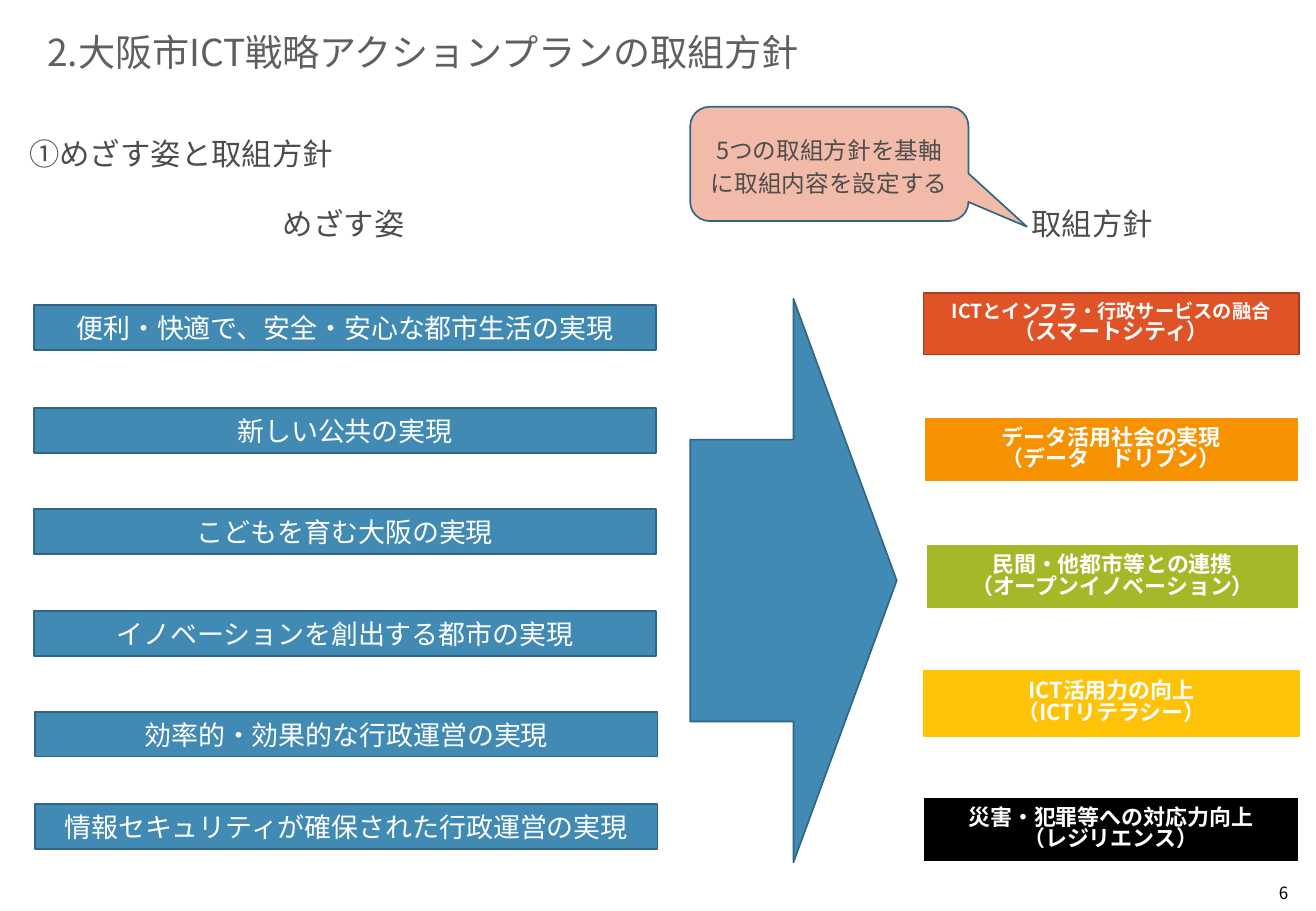
from lxml.etree import SubElement
from pptx import Presentation
from pptx.dml.color import RGBColor
from pptx.enum.shapes import MSO_SHAPE
from pptx.enum.text import MSO_ANCHOR, PP_ALIGN
from pptx.oxml.ns import qn
from pptx.util import Inches, Pt

FONT = "Noto Sans CJK JP"
BLUE, DARK_BLUE = "418AB3", "306684"
WHITE, GREY = "FFFFFF", "4D4D4D"

VISIONS = [
    (0.28, 2.51, "便利・快適で、安全・安心な都市生活の実現"),
    (0.28, 3.36, "新しい公共の実現"),
    (0.28, 4.19, "こどもを育む大阪の実現"),
    (0.28, 5.03, "イノベーションを創出する都市の実現"),
    (0.29, 5.86, "効率的・効果的な行政運営の実現"),
    (0.29, 6.62, "情報セキュリティが確保された行政運営の実現"),
]
# box, fill, line colour, line width, text (\v is a line break)
POLICIES = [
    ((7.6, 2.41, 3.09, 0.51), "DF5327", "A53D1D", 1,
     "ICTとインフラ・行政サービスの融合\v（スマートシティ）"),
    ((7.6, 3.43, 3.09, 0.54), "F69200", WHITE, 1.5,
     "データ活用社会の実現\v（データ　ドリブン）"),
    ((7.62, 4.48, 3.07, 0.54), "A6B727", WHITE, 1.5,
     "民間・他都市等との連携\v（オープンイノベーション）"),
    ((7.6, 5.52, 3.09, 0.54), "FEC306", "FEC306", 1,
     "ICT活用力の向上\v（ICTリテラシー）"),
    ((7.59, 6.56, 3.1, 0.54), "000000", WHITE, 1.5,
     "災害・犯罪等への対応力向上\v（レジリエンス）"),
]


def color(hex_text):
    return RGBColor.from_string(hex_text)


class SlideBuilder:
    def __init__(self, slide):
        self.slide = slide

    def set_text(self, shape, text, size, text_color, align=PP_ALIGN.LEFT, bold=False, spacing=1.0):
        """Fill the shape with one styled, vertically centred paragraph."""
        frame = shape.text_frame
        frame.word_wrap = True
        frame.vertical_anchor = MSO_ANCHOR.MIDDLE
        frame.margin_top = frame.margin_bottom = 0
        paragraph = frame.paragraphs[0]
        paragraph.text = text
        paragraph.alignment = align
        paragraph.line_spacing = spacing
        font = paragraph.font
        font.size = Pt(size)
        font.bold = bold
        font.color.rgb = color(text_color)
        font.name = FONT
        properties = paragraph._p.pPr.find(qn("a:defRPr"))
        SubElement(properties, qn("a:ea")).set("typeface", FONT)
        return paragraph

    def title(self, box, text):
        shape = self.slide.shapes.title
        shape.left, shape.top, shape.width, shape.height = map(Inches, box)
        self.set_text(shape, text, 22, "5F5F5F", spacing=0.9)

    def label(self, box, text, size=18, text_color=GREY, align=PP_ALIGN.LEFT):
        shape = self.slide.shapes.add_textbox(*map(Inches, box))
        self.set_text(shape, text, size, text_color, align)
        return shape

    def shape(self, kind, box, fill, line=DARK_BLUE, line_width=1):
        shape = self.slide.shapes.add_shape(kind, *map(Inches, box))
        shape.shadow.inherit = False
        shape.fill.solid()
        shape.fill.fore_color.rgb = color(fill)
        shape.line.color.rgb = color(line)
        shape.line.width = Pt(line_width)
        return shape


def main():
    presentation = Presentation()
    presentation.slide_width = Inches(10.83)
    presentation.slide_height = Inches(7.5)
    slide = presentation.slides.add_slide(presentation.slide_layouts[5])
    builder = SlideBuilder(slide)

    builder.title((0.29, 0.24, 9.95, 0.41), "2.大阪市ICT戦略アクションプランの取組方針")
    heading = builder.label((0.24, 1.05, 4.88, 0.42), "①めざす姿と取組方針")
    heading.text_frame.margin_left = 0
    builder.label((2.23, 1.64, 1.3, 0.4), "めざす姿")
    builder.label((8.39, 1.64, 1.3, 0.4), "取組方針")

    for left, top, text in VISIONS:
        bar = builder.shape(MSO_SHAPE.RECTANGLE, (left, top, 5.12, 0.37), BLUE)
        builder.set_text(bar, text, 16, WHITE, PP_ALIGN.CENTER)

    builder.shape(MSO_SHAPE.RIGHT_ARROW, (5.68, 2.46, 1.7, 4.64), BLUE)

    for index, (box, fill, line, line_width, text) in enumerate(POLICIES):
        policy = builder.shape(MSO_SHAPE.RECTANGLE, box, fill, line, line_width)
        paragraph = builder.set_text(policy, text, 13, WHITE, PP_ALIGN.CENTER, True, 0.82)
        if index == 0:
            paragraph.runs[0].font.size = Pt(11.4)

    callout = builder.shape(
        MSO_SHAPE.ROUNDED_RECTANGULAR_CALLOUT, (5.68, 0.88, 2.29, 0.94), "F2BAA9")
    for index, value in enumerate((0.71, 0.55, 0.17)):
        callout.adjustments[index] = value
    paragraph = builder.set_text(callout, "5つの取組方針を基軸に取組内容を設定する",
                                 14, GREY, PP_ALIGN.CENTER, spacing=1.16)
    paragraph.space_before = Pt(4)

    builder.label((8.17, 7.25, 2.53, 0.2), "6", 10, "000000", PP_ALIGN.RIGHT)
    presentation.save("out.pptx")


if __name__ == "__main__":
    main()
